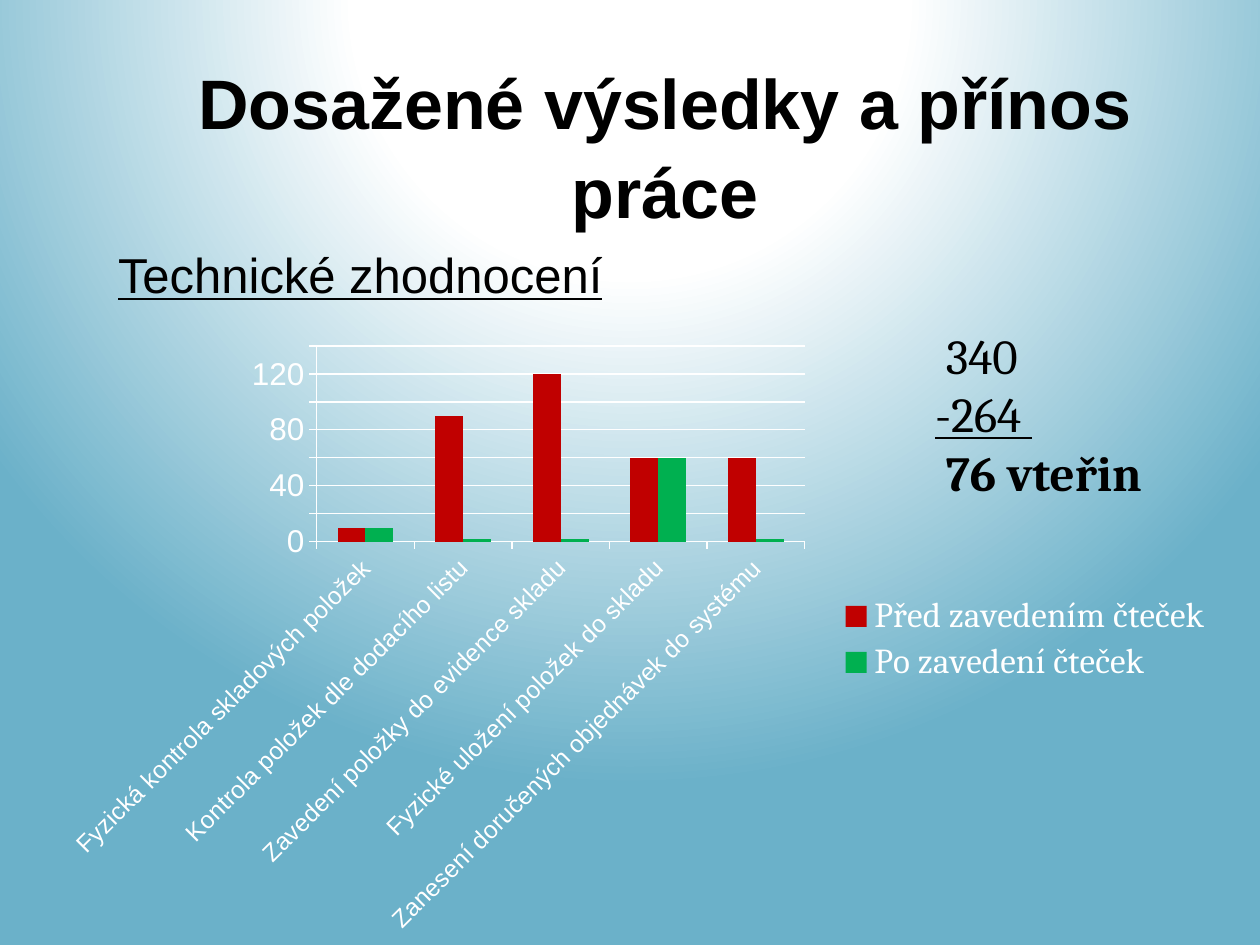
from dataclasses import dataclass

from pptx import Presentation
from pptx.chart.data import CategoryChartData as ChartData
from pptx.dml.color import RGBColor as Rgb
from pptx.enum.chart import XL_CHART_TYPE as Kind, XL_LEGEND_POSITION as Side
from pptx.enum.chart import XL_TICK_MARK as Tick
from pptx.enum.text import PP_ALIGN as Align
from pptx.oxml import parse_xml
from pptx.oxml.ns import nsdecls, qn
from pptx.util import Cm, Pt

HUES = {
    "white": "FFFFFF",
    "black": "000000",
    "sky": "6BB1C9",
    "red": "C00000",
    "green": "00B050",
}
SANS, SERIF = "Arial", "Cambria"


@dataclass
class Box:
    """Place and size in centimetres."""
    left: float
    top: float
    wide: float
    high: float

    def place(self) -> tuple:
        return Cm(self.left), Cm(self.top), Cm(self.wide), Cm(self.high)


@dataclass
class Line:
    text: str
    bold: bool = False
    under: bool = False


@dataclass
class Series:
    name: str
    values: tuple
    hue: str


STEPS = (
    "Fyzická kontrola skladových položek",
    "Kontrola položek dle dodacího listu",
    "Zavedení položky do evidence skladu",
    "Fyzické uložení položek do skladu",
    "Zanesení doručených objednávek do systému",
)
TIMES = (
    Series("Před zavedením čteček", (10, 90, 120, 60, 60), "red"),
    Series("Po zavedení čteček", (10, 2, 2, 60, 2), "green"),
)


def tint(name: str) -> Rgb:
    return Rgb.from_string(HUES[name])


def style(font, size: float, face: str, hue: str) -> None:
    font.size, font.name = Pt(size), face
    font.color.rgb = tint(hue)


def write(slide, box: Box, lines: list[Line], *, size: float, face: str,
          hue: str = "black", align=Align.LEFT, wrap: bool = True,
          indent: float = 0, spacing: float = 1) -> None:
    frame = slide.shapes.add_textbox(*box.place()).text_frame
    frame.word_wrap = wrap
    for i, line in enumerate(lines):
        par = frame.add_paragraph() if i else frame.paragraphs[0]
        par.alignment, par.line_spacing = align, spacing
        if indent:
            props = par._p.get_or_add_pPr()
            props.set("marL", str(Cm(indent)))
            props.set("indent", "0")
        run = par.add_run()
        run.text = line.text
        style(run.font, size, face, hue)
        run.font.bold, run.font.underline = line.bold, line.under


def paint(slide) -> None:
    """Fill the background with a round glow from the top."""
    fill = slide.background.fill
    fill.gradient()
    grad = slide.background._cSld.find(".//" + qn("a:gradFill"))
    stops = "".join(
        f'<a:gs pos="{pos * 1000}"><a:srgbClr val="{HUES[name]}"/></a:gs>'
        for pos, name in ((0, "white"), (35, "white"), (100, "sky")))
    glow = parse_xml(
        f'<a:gradFill {nsdecls("a")} rotWithShape="1"><a:gsLst>{stops}</a:gsLst>'
        '<a:path path="circle"><a:fillToRect l="50000" t="-80000" r="50000" '
        'b="180000"/></a:path></a:gradFill>')
    grad.getparent().replace(grad, glow)


def layout(x: float, y: float, w: float, h: float, inner: bool = False):
    """Give a manual layout in shares of the chart's size."""
    target = '<c:layoutTarget val="inner"/>' if inner else ""
    modes = "".join(f'<c:{k}Mode val="edge"/>' for k in "xy")
    sizes = "".join(f'<c:{k} val="{v}"/>' for k, v in zip("xywh", (x, y, w, h)))
    return parse_xml(f'<c:layout {nsdecls("c")}><c:manualLayout>{target}{modes}'
                     f'{sizes}</c:manualLayout></c:layout>')


def clear(part) -> None:
    """Drop the layout a chart part already has."""
    for old in part.findall(qn("c:layout")):
        part.remove(old)


def trim(axis, size: float) -> None:
    style(axis.tick_labels.font, size, SANS, "white")
    axis.major_tick_mark, axis.minor_tick_mark = Tick.OUTSIDE, Tick.NONE
    axis.format.line.color.rgb = tint("white")
    axis.format.line.width = Pt(0.75)


def draw(slide, box: Box, steps: tuple, times: tuple) -> None:
    data = ChartData()
    data.categories = steps
    for item in times:
        data.add_series(item.name, item.values)
    chart = slide.shapes.add_chart(
        Kind.COLUMN_CLUSTERED, *box.place(), data).chart
    chart.has_title = False
    style(chart.font, 10, SERIF, "white")

    plot = chart.plots[0]
    plot.gap_width, plot.overlap = 150, 0
    plot.vary_by_categories = False
    for bars, item in zip(plot.series, times):
        bars.format.fill.solid()
        bars.format.fill.fore_color.rgb = tint(item.hue)

    trim(chart.category_axis, 14)
    body = chart.category_axis._element.find(
        qn("c:txPr")).find(qn("a:bodyPr"))
    body.set("rot", "-2700000")
    body.set("vert", "horz")

    scale = chart.value_axis
    trim(scale, 18)
    scale.minimum_scale, scale.maximum_scale, scale.major_unit = 0, 140, 20
    scale.has_major_gridlines = True
    grid = scale.major_gridlines.format.line
    grid.color.rgb, grid.width = tint("white"), Pt(0.75)

    area = chart._chartSpace.chart.plotArea
    clear(area)
    area.insert(0, layout(0.226, 0.02, 0.416, 0.32, inner=True))

    chart.has_legend = True
    key = chart.legend
    key.position, key.include_in_layout = Side.RIGHT, False
    style(key.font, 20, SERIF, "white")
    clear(key._element)
    key._element.find(qn("c:legendPos")).addnext(
        layout(0.67, 0.42, 0.32, 0.16))


def main() -> None:
    deck = Presentation()
    deck.slide_width, deck.slide_height = Cm(25.4), Cm(19.05)
    slide = deck.slides.add_slide(deck.slide_layouts[6])
    paint(slide)
    write(slide, Box(3.3, 1, 20.2, 3.68),
          [Line("Dosažené výsledky a přínos práce", bold=True)],
          size=40, face=SANS, align=Align.CENTER, spacing=1.05)
    write(slide, Box(1.75, 4.75, 23.32, 13.08),
          [Line("Technické zhodnocení", under=True)],
          size=28, face=SANS, indent=0.38, spacing=1.05)
    draw(slide, Box(1.04, 6.73, 23.65, 12.32), STEPS, TIMES)
    write(slide, Box(18.6, 6.43, 4.72, 3.84),
          [Line(" 340"), Line("-264 ", under=True),
           Line(" 76 vteřin", bold=True)],
          size=28, face=SERIF, wrap=False)
    deck.save("out.pptx")


if __name__ == "__main__":
    main()
